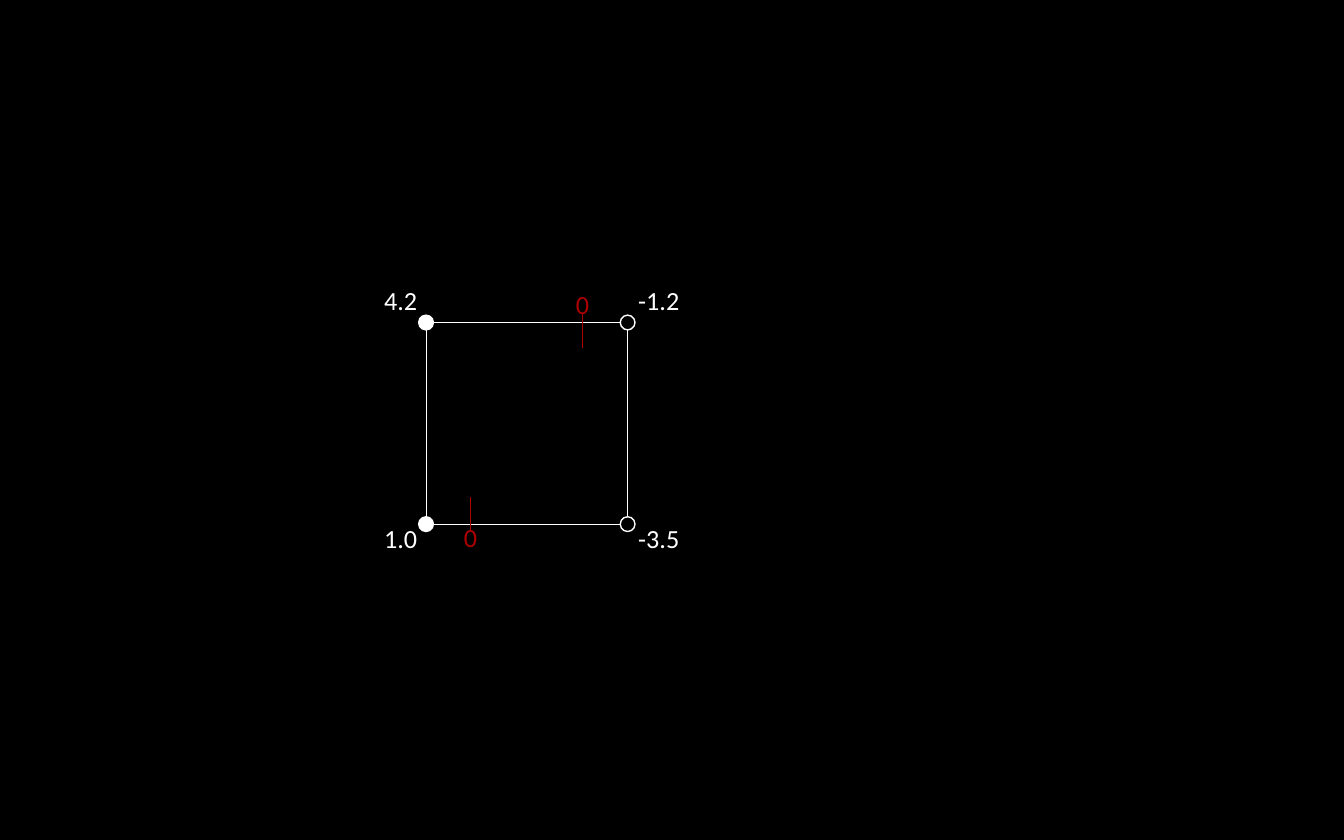
"""Draw a grid cell with signed corner values and interpolated zero crossings."""
from dataclasses import dataclass

from lxml.etree import SubElement
from pptx import Presentation
from pptx.dml.color import RGBColor
from pptx.enum.shapes import MSO_CONNECTOR, MSO_SHAPE as Shape
from pptx.enum.text import MSO_AUTO_SIZE as AutoSize
from pptx.oxml.ns import qn
from pptx.shapes.shapetree import GroupShapes
from pptx.util import Inches, Pt

BLACK = RGBColor(0x00, 0x00, 0x00)
WHITE = RGBColor(0xFF, 0xFF, 0xFF)
RED = RGBColor(0xAD, 0x01, 0x01)

LEFT, TOP, SIDE = 3.17, 2.4, 1.5
RIGHT, BOTTOM = LEFT + SIDE, TOP + SIDE
DOT = 0.11
TEXT_HEIGHT = 0.34


@dataclass(frozen=True)
class Edge:
    """A horizontal cell edge with its corner values and the heights of its marks."""
    y: float
    left_value: float
    right_value: float
    value_top: float
    zero_top: float
    tick_top: float

    @property
    def zero_x(self) -> float:
        return LEFT + SIDE * self.left_value / (self.left_value - self.right_value)


EDGES = (
    Edge(BOTTOM, 1.0, -3.5, 3.84, 3.83, 3.7),
    Edge(TOP, 4.2, -1.2, 2.07, 2.1, 2.34),
)


def draw_cell(shapes: GroupShapes) -> None:
    cell = shapes.add_shape(
        Shape.RECTANGLE, Inches(LEFT), Inches(TOP), Inches(SIDE), Inches(SIDE))
    cell.shadow.inherit = False
    cell.fill.background()
    cell.line.color.rgb = WHITE
    cell.line.width = Pt(0.25)


def draw_corner(shapes: GroupShapes, x: float, y: float, value: float) -> None:
    dot = shapes.add_shape(
        Shape.OVAL, Inches(x - DOT / 2), Inches(y - DOT / 2), Inches(DOT), Inches(DOT))
    dot.shadow.inherit = False
    dot.fill.solid()
    dot.fill.fore_color.rgb = WHITE if value > 0 else BLACK
    dot.line.color.rgb = WHITE
    dot.line.width = Pt(0.75)


def draw_label(shapes: GroupShapes, text: str, left: float, top: float,
               width: float, color: RGBColor) -> None:
    box = shapes.add_textbox(Inches(left), Inches(top), Inches(width), Inches(TEXT_HEIGHT))
    frame = box.text_frame
    frame.text = text
    frame.word_wrap = False
    frame.auto_size = AutoSize.SHAPE_TO_FIT_TEXT
    span = frame.paragraphs[0].runs[0]
    span.font.name = "Calibri"
    span.font.size = Pt(14)
    span.font.color.rgb = color


def draw_tick(shapes: GroupShapes, x: float, top: float) -> None:
    tick = shapes.add_connector(
        MSO_CONNECTOR.STRAIGHT, Inches(x), Inches(top), Inches(x), Inches(top + 0.25))
    tick.line.color.rgb = RED
    tick.line.width = Pt(0.5)
    SubElement(tick._element.spPr, qn("a:effectLst"))


def main() -> None:
    deck = Presentation()
    deck.slide_width, deck.slide_height = Inches(10), Inches(6.25)
    page = deck.slides.add_slide(deck.slide_layouts[6])
    page.background.fill.solid()
    page.background.fill.fore_color.rgb = BLACK

    shapes = page.shapes.add_group_shape().shapes
    draw_cell(shapes)
    for edge in EDGES:
        draw_corner(shapes, LEFT, edge.y, edge.left_value)
        draw_corner(shapes, RIGHT, edge.y, edge.right_value)
        draw_label(shapes, f"{edge.left_value:.1f}", 2.76, edge.value_top, 0.45, WHITE)
        draw_label(shapes, f"{edge.right_value:.1f}", 4.65, edge.value_top, 0.51, WHITE)
        draw_label(shapes, "0", edge.zero_x - 0.15, edge.zero_top, 0.3, RED)
        draw_tick(shapes, edge.zero_x, edge.tick_top)
    deck.save("out.pptx")


if __name__ == "__main__":
    main()
